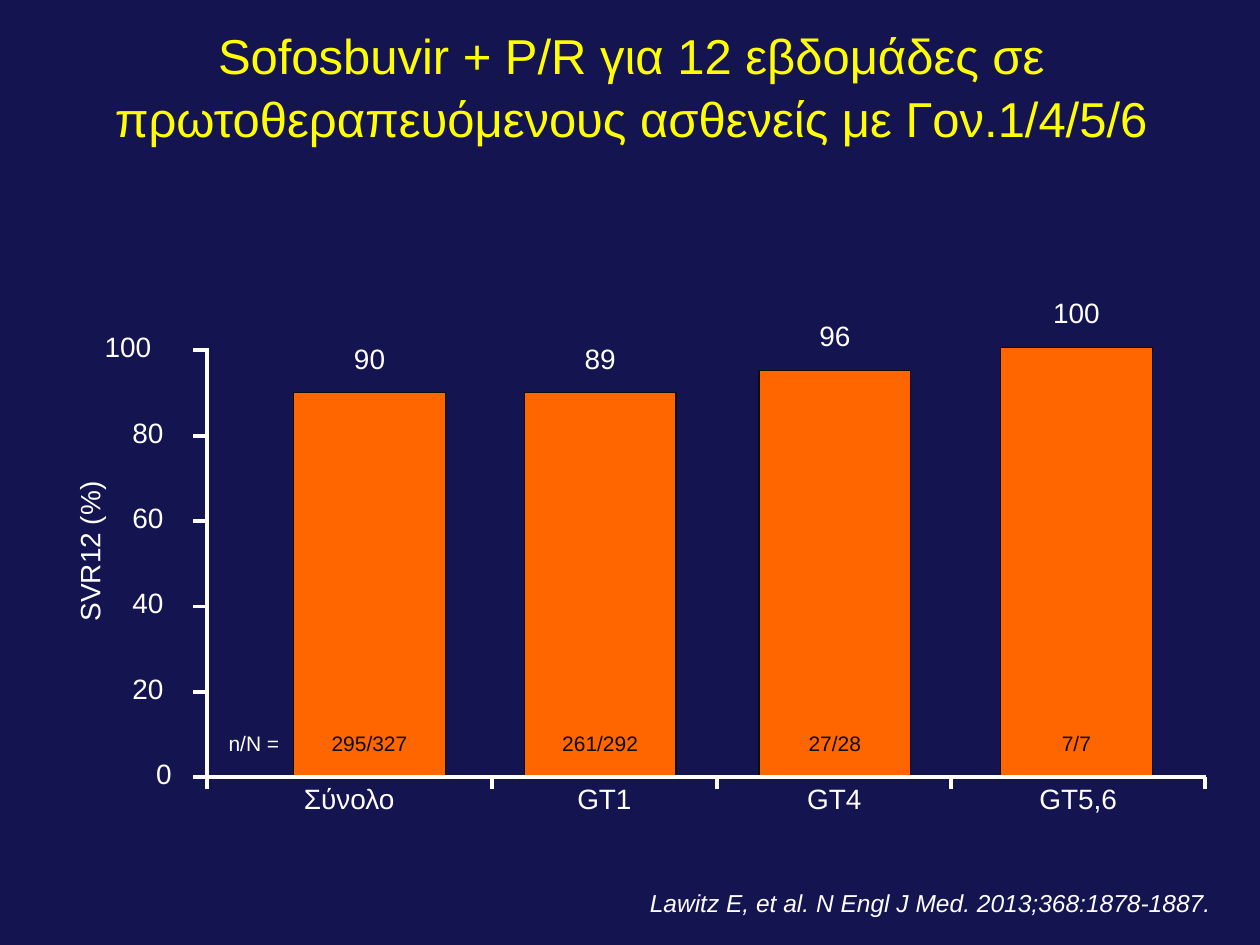
import pptx
import pptx.dml.color
import pptx.enum.shapes
import pptx.enum.text
import pptx.oxml.ns
import pptx.util
from dataclasses import dataclass
from lxml import etree

Cm = pptx.util.Cm
Pt = pptx.util.Pt
RGB = pptx.dml.color.RGBColor.from_string
Align = pptx.enum.text.PP_ALIGN
Anchor = pptx.enum.text.MSO_ANCHOR


@dataclass(frozen=True)
class Theme:
    font: str = "Arial"
    back: str = "141450"
    title: str = "FFFF00"
    light: str = "FFFFFF"
    dark: str = "0C0C0C"
    bar: str = "FF6600"
    head: int = 28
    label: int = 16
    cite: int = 14
    small: int = 12
    axis: float = 2.25
    edge: float = 0.75


theme = Theme()

# Category, percent, count, bar left and bar height (cm, from the axes)
BARS = [
    ("Σύνολο", "90", "295/327", 1.75, 7.73),
    ("GT1", "89", "261/292", 6.4, 7.73),
    ("GT4", "96", "27/28", 11.13, 8.18),
    ("GT5,6", "100", "7/7", 16, 8.64),
]
EDGES = [0, 5.74, 10.29, 15.01, 20.12]
# Left and width of a scale label by its number of digits
SCALE = {3: (-2.31, 2.62), 2: (-1.75, 1.96), 1: (-1.27, 1.14)}


def assign(item, values):
    for name, value in values.items():
        setattr(item, name, value)


def style(par, size, color, **extra):
    assign(par.font, {"name": theme.font, "size": Pt(size), **extra})
    par.font.color.rgb = RGB(color)


def write(slide, text, box, size=theme.label, color=theme.light,
          align=Align.CENTER, anchor=Anchor.TOP, wrap=True, **extra):
    shape = slide.shapes.add_textbox(*map(Cm, box))
    frame = shape.text_frame
    assign(frame, {"word_wrap": wrap, "vertical_anchor": anchor})
    par = frame.paragraphs[0]
    assign(par, {"text": text, "alignment": align, "line_spacing": 0.9})
    style(par, size, color, **extra)
    return shape


def rule(slide, x1, y1, x2, y2):
    kind = pptx.enum.shapes.MSO_CONNECTOR.STRAIGHT
    line = slide.shapes.add_connector(kind, *map(Cm, (x1, y1, x2, y2)))
    line.line.width = Pt(theme.axis)
    line.line.color.rgb = RGB(theme.light)
    etree.SubElement(line._element.spPr, pptx.oxml.ns.qn("a:effectLst"))


def heading(slide, box):
    shape = slide.shapes.title
    names = ("left", "top", "width", "height")
    assign(shape, dict(zip(names, map(Cm, box))))
    frame = shape.text_frame
    sides = ("margin_left", "margin_top", "margin_right", "margin_bottom")
    assign(frame, {
        **dict.fromkeys(sides, 0),
        "word_wrap": True,
        "vertical_anchor": Anchor.TOP,
        "auto_size": pptx.enum.text.MSO_AUTO_SIZE.NONE,
    })
    par = frame.paragraphs[0]
    assign(par, {
        "text": "Sofosbuvir + P/R για 12 εβδομάδες σε "
                "πρωτοθεραπευόμενους ασθενείς με Γον.1/4/5/6",
        "alignment": Align.CENTER,
        "line_spacing": Pt(36),
    })
    style(par, theme.head, theme.title)


def scale(slide, box):
    x, y, _, high = box
    rule(slide, x, y, x, y + high)
    first = y + 0.05
    step = (y + high - first) / 5
    for i in range(6):
        mark, text = first + i * step, str(100 - 20 * i)
        rule(slide, x - 0.27, mark, x, mark)
        left, wide = SCALE[len(text)]
        write(slide, text, (x + left, mark - 0.46, wide, 1.09),
              align=Align.LEFT)
    name = write(slide, "SVR12 (%)", (x - 4.22, y + 3.51, 3.78, 1.19),
                 anchor=Anchor.MIDDLE, wrap=False)
    name.rotation = 270


def columns(slide, box):
    x, y, wide, high = box
    base, thick = y + high, 3.06
    for i, (group, rate, count, left, tall) in enumerate(BARS):
        left, top = x + left, base - 0.02 - tall
        bar = slide.shapes.add_shape(
            pptx.enum.shapes.MSO_SHAPE.RECTANGLE,
            *map(Cm, (left, top, thick, tall)))
        bar.shadow.inherit = False
        bar.fill.solid()
        bar.fill.fore_color.rgb = RGB(theme.bar)
        bar.line.width = Pt(theme.edge)
        bar.line.color.rgb = RGB(theme.dark)
        write(slide, rate, (left, top - 1.09, thick, 1.09))
        write(slide, count, (left, base - 1.01, thick, 0.89),
              theme.small, theme.dark)
        start, stop = EDGES[i:i + 2]
        write(slide, group, (x + start, base + 0.03, stop - start, 1.09))
    write(slide, "n/N =", (x - 0.23, base - 1.01, 2.36, 0.89), theme.small)
    # Base line and category ticks
    for edge in EDGES:
        rule(slide, x + edge, base, x + edge, base + 0.23)
    rule(slide, x, base, x + wide, base)


def source(slide, box):
    write(slide, "Lawitz E, et al. N Engl J Med. 2013;368:1878-1887.", box,
          theme.cite, align=Align.LEFT, anchor=Anchor.BOTTOM, italic=True)


def main():
    deck = pptx.Presentation()
    assign(deck, {"slide_width": Cm(25.4), "slide_height": Cm(19.05)})
    slide = deck.slides.add_slide(deck.slide_layouts[5])
    slide.background.fill.solid()
    slide.background.fill.fore_color.rgb = RGB(theme.back)
    plot = (4.17, 7.01, 20.14, 8.66)
    heading(slide, (0.66, 0.43, 24.13, 2.74))
    scale(slide, plot)
    columns(slide, plot)
    source(slide, (12.85, 17.83, 11.91, 0.79))
    deck.save("out.pptx")


if __name__ == "__main__":
    main()
